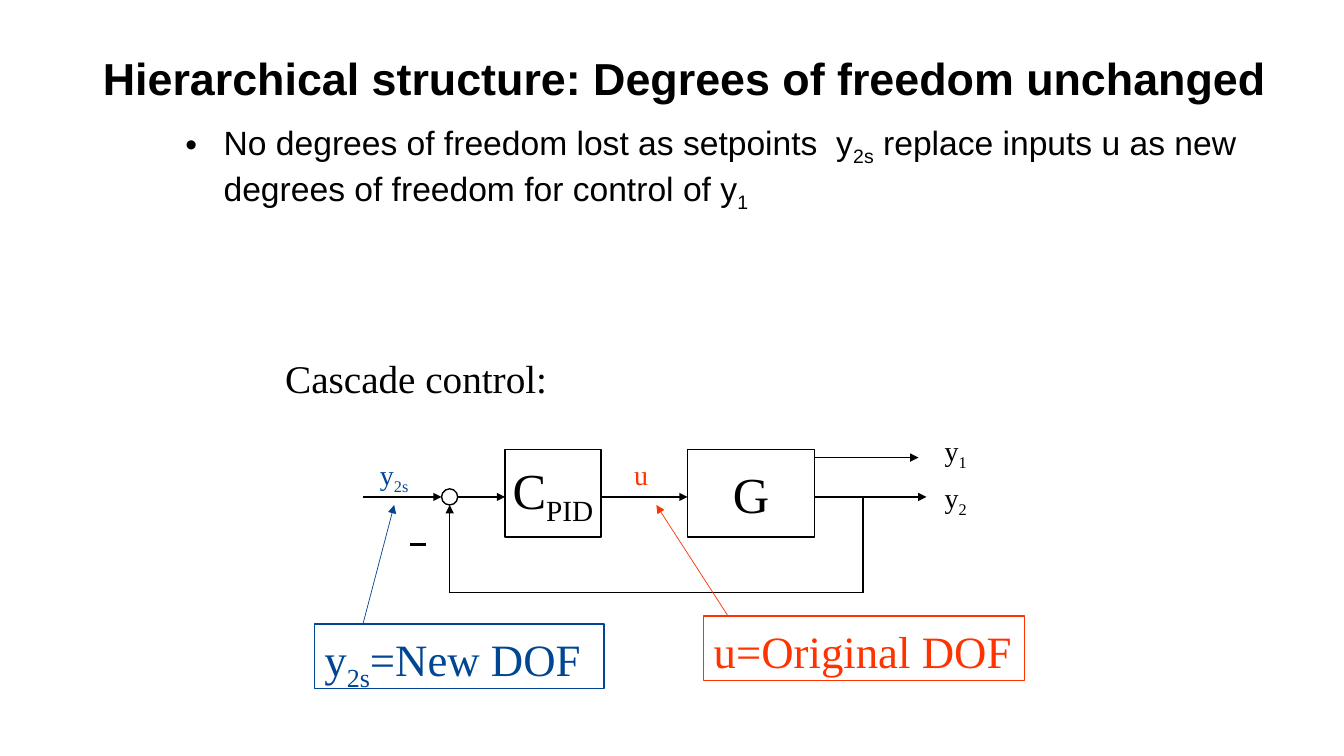
from dataclasses import dataclass

from lxml.etree import SubElement
from pptx import Presentation
from pptx.dml.color import RGBColor
from pptx.enum.shapes import MSO_CONNECTOR, MSO_SHAPE
from pptx.enum.text import MSO_ANCHOR, PP_ALIGN
from pptx.oxml.ns import qn
from pptx.util import Inches, Pt

BLACK, BLUE, RED = "000000", "014693", "FF3300"
SERIF, SANS = "Times New Roman", "Arial"
SIGNAL_Y, FEEDBACK_Y, SUM_X, BRANCH_X = 4.93, 5.88, 4.46, 8.56
SUM_RADIUS = 0.08


@dataclass
class Run:
    text: str
    subscript: bool = False


@dataclass
class Label:
    left: float
    top: float
    width: float
    height: float
    size: float
    runs: list[Run]
    color: str = BLACK
    framed: bool = False
    centered: bool = False


@dataclass
class Line:
    start: tuple[float, float]
    end: tuple[float, float]
    color: str = BLACK
    width: float = 1
    arrow: bool = True


def rgb(color: str) -> RGBColor:
    return RGBColor.from_string(color)


def add_runs(paragraph, runs: list[Run], font_name: str, size: float,
             color: str, bold: bool = False) -> None:
    for item in runs:
        run = paragraph.add_run()
        run.text = item.text
        run.font.name = font_name
        run.font.size = Pt(size)
        run.font.bold = bold
        run.font.color.rgb = rgb(color)
        if item.subscript:
            run.font._element.set("baseline", "-25000")


def add_label(slide, label: Label) -> None:
    bounds = [Inches(value) for value in (label.left, label.top, label.width, label.height)]
    if label.framed:
        shape = slide.shapes.add_shape(MSO_SHAPE.RECTANGLE, *bounds)
        shape.shadow.inherit = False
        shape.fill.background()
        shape.line.color.rgb = rgb(label.color)
        shape.line.width = Pt(1)
    else:
        shape = slide.shapes.add_textbox(*bounds)
    frame = shape.text_frame
    frame.word_wrap = False
    paragraph = frame.paragraphs[0]
    if label.centered:
        frame.vertical_anchor = MSO_ANCHOR.MIDDLE
        paragraph.alignment = PP_ALIGN.CENTER
    else:
        frame.vertical_anchor = MSO_ANCHOR.TOP
        frame.margin_top = Inches(0.08)
        paragraph.alignment = PP_ALIGN.LEFT
    add_runs(paragraph, label.runs, SERIF, label.size, label.color)


def add_line(slide, line: Line) -> None:
    points = [Inches(value) for value in (*line.start, *line.end)]
    connector = slide.shapes.add_connector(MSO_CONNECTOR.STRAIGHT, *points)
    connector.line.color.rgb = rgb(line.color)
    connector.line.width = Pt(line.width)
    if line.arrow:
        SubElement(connector.line._get_or_add_ln(), qn("a:tailEnd"), type="triangle")
    SubElement(connector._element.spPr, qn("a:effectLst"))


def add_summing_junction(slide) -> None:
    diameter = Inches(2 * SUM_RADIUS)
    circle = slide.shapes.add_shape(
        MSO_SHAPE.OVAL, Inches(SUM_X - SUM_RADIUS), Inches(SIGNAL_Y - SUM_RADIUS),
        diameter, diameter)
    circle.shadow.inherit = False
    circle.fill.background()
    circle.line.color.rgb = rgb(BLACK)
    circle.line.width = Pt(1)


def add_title(slide) -> None:
    title = slide.shapes.title
    title.left, title.top = Inches(0.92), Inches(0.4)
    title.width, title.height = Inches(12.35), Inches(1.45)
    frame = title.text_frame
    frame.word_wrap = True
    frame.vertical_anchor = MSO_ANCHOR.TOP
    frame.margin_top = Inches(0.1)
    paragraph = frame.paragraphs[0]
    paragraph.alignment = PP_ALIGN.LEFT
    paragraph.line_spacing = 1.0
    add_runs(paragraph, [Run("Hierarchical structure: Degrees of freedom unchanged")],
             SANS, 32, BLACK, bold=True)


def add_body(slide) -> None:
    body = slide.shapes.add_textbox(Inches(1.74), Inches(1.16), Inches(10.8), Inches(5.86))
    body.text_frame.word_wrap = True
    paragraph = body.text_frame.paragraphs[0]
    properties = paragraph._p.get_or_add_pPr()
    properties.set("marL", str(Inches(0.38)))
    properties.set("indent", str(Inches(-0.38)))
    SubElement(properties, qn("a:buFont"), typeface=SANS)
    SubElement(properties, qn("a:buChar"), char="•")
    add_runs(paragraph, [
        Run("No degrees of freedom lost as setpoints  y"), Run("2s", True),
        Run(" replace inputs u as new degrees of freedom for control of y"), Run("1", True),
    ], SANS, 24, BLACK)


LABELS = [
    Label(6.82, 4.46, 1.26, 0.87, 36, [Run("G")], framed=True, centered=True),
    Label(5.01, 4.46, 0.95, 0.87, 36, [Run("C"), Run("PID", True)], framed=True, centered=True),
    Label(3.67, 4.46, 0.51, 0.44, 20, [Run("y"), Run("2s", True)], BLUE),
    Label(6.19, 4.46, 0.34, 0.44, 20, [Run("u")], RED),
    Label(9.27, 4.69, 1.18, 0.44, 20, [Run("y"), Run("2", True)]),
    Label(9.27, 4.22, 0.44, 0.44, 20, [Run("y"), Run("1", True)]),
    Label(6.98, 6.11, 3.18, 0.64, 32, [Run("u=Original DOF")], RED, framed=True),
    Label(3.12, 6.19, 2.87, 0.64, 32,
          [Run("y"), Run("2s", True), Run("=New DOF")], BLUE, framed=True),
    Label(2.73, 3.44, 2.82, 0.57, 28, [Run("Cascade control:")]),
]

LINES = [
    Line((3.6, SIGNAL_Y), (SUM_X - SUM_RADIUS, SIGNAL_Y)),
    Line((SUM_X + SUM_RADIUS, SIGNAL_Y), (5.01, SIGNAL_Y)),
    Line((5.96, SIGNAL_Y), (6.82, SIGNAL_Y)),
    Line((8.08, SIGNAL_Y), (9.19, SIGNAL_Y)),
    Line((8.08, 4.54), (9.11, 4.54)),
    Line((BRANCH_X, SIGNAL_Y), (BRANCH_X, FEEDBACK_Y), arrow=False),
    Line((BRANCH_X, FEEDBACK_Y), (SUM_X, FEEDBACK_Y), arrow=False),
    Line((SUM_X, FEEDBACK_Y), (SUM_X, SIGNAL_Y + SUM_RADIUS)),
    Line((4.07, 5.4), (4.23, 5.4), width=2, arrow=False),
    Line((7.22, 6.11), (6.51, 5.01), RED, 0.5),
    Line((3.6, 6.19), (3.91, 5.01), BLUE, 0.5),
]


def main() -> None:
    presentation = Presentation()
    presentation.slide_width = Inches(13.33)
    presentation.slide_height = Inches(7.5)
    slide = presentation.slides.add_slide(presentation.slide_layouts[5])
    add_title(slide)
    add_body(slide)
    for label in LABELS:
        add_label(slide, label)
    add_summing_junction(slide)
    for line in LINES:
        add_line(slide, line)
    presentation.save("out.pptx")


if __name__ == "__main__":
    main()
